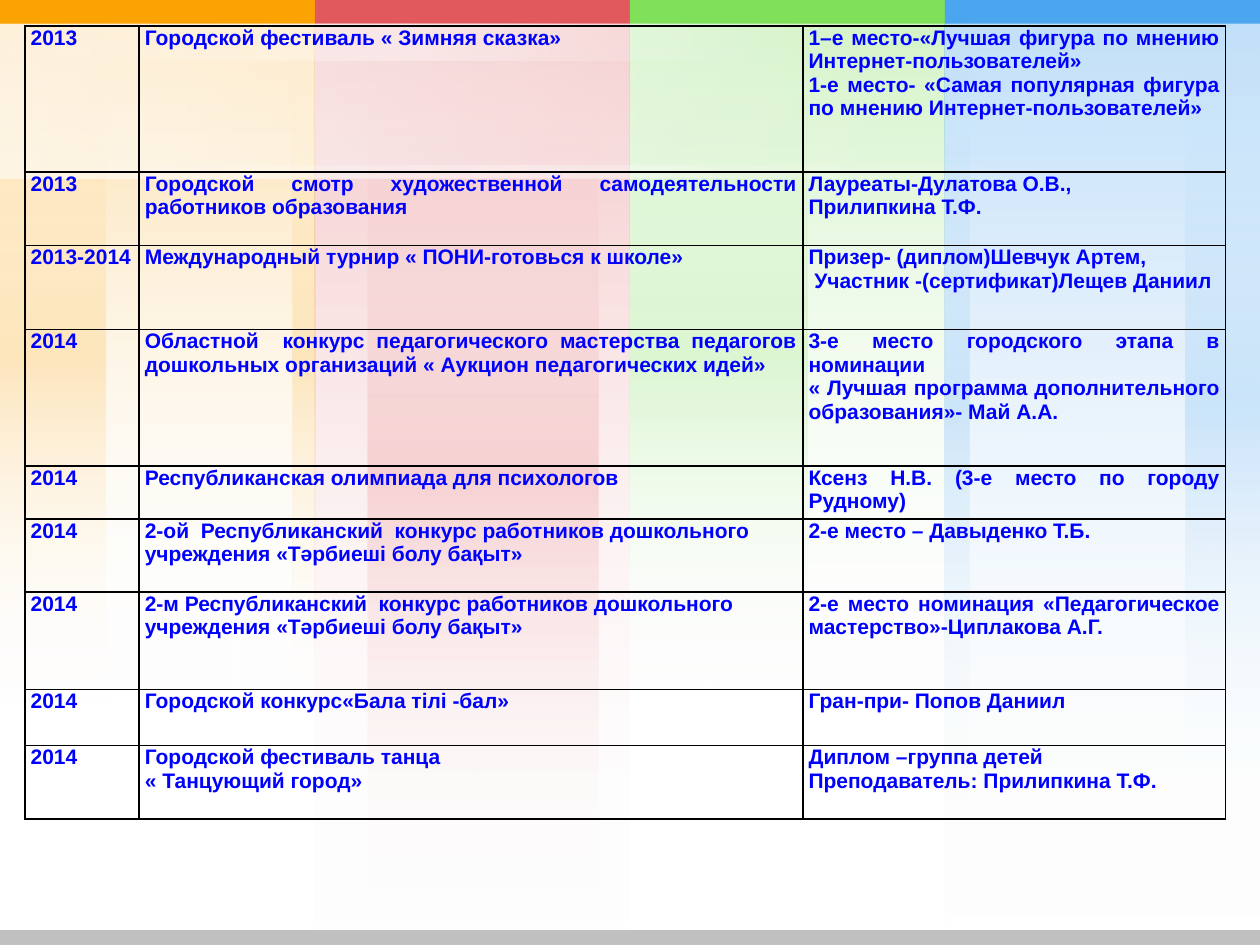
import pptx
import pptx.util
import pptx.dml.color
import pptx.enum.shapes
import pptx.enum.text
import pptx.oxml
import pptx.oxml.ns

Pt = pptx.util.Pt
qn = pptx.oxml.ns.qn
NS = pptx.oxml.ns.nsdecls("a")
LEFT = pptx.enum.text.PP_ALIGN.LEFT
JUSTIFY = pptx.enum.text.PP_ALIGN.JUSTIFY

ORANGE, RED, GREEN, BLUE = "FCA304", "E1595C", "80E05A", "4BA5EF"
WHITE, GREY, BLACK, INK = "FFFFFF", "C0C0C0", "000000", "0000FF"


def rgb(value):
    return pptx.dml.color.RGBColor.from_string(value)


class Deck:
    font, size, margin = "Arial", 12, 3.3

    def __init__(self, width, height):
        self.prs = pptx.Presentation()
        self.prs.slide_width, self.prs.slide_height = Pt(width), Pt(height)
        self.s = self.prs.slides.add_slide(self.prs.slide_layouts[6])
        self.s.background.fill.solid()
        self.s.background.fill.fore_color.rgb = rgb(WHITE)

    def group(self):
        return self.s.shapes.add_group_shape().shapes

    def rect(self, shapes, x, y, w, h, color, rotation=0):
        sp = shapes.add_shape(pptx.enum.shapes.MSO_SHAPE.RECTANGLE,
                              Pt(x), Pt(y), Pt(w), Pt(h))
        sp.rotation = rotation
        sp.shadow.inherit = False
        sp.fill.solid()
        sp.fill.fore_color.rgb = rgb(color)
        sp.line.fill.background()
        return sp

    def fade(self, shapes, x, y, w, h, color, opacity, middle=False, rotation=0):
        """Rectangle fading downwards, or away from its middle both ways."""
        sp = self.rect(shapes, x, y, w, h, color, rotation)
        stops = [(0, color, opacity), (100, WHITE, 0)]
        if middle:
            stops = [(0, WHITE, 0), (50, color, opacity), (100, WHITE, 0)]
        gs = "".join(
            f'<a:gs pos="{pos * 1000}"><a:srgbClr val="{c}">'
            f'<a:alpha val="{alpha * 1000}"/></a:srgbClr></a:gs>'
            for pos, c, alpha in stops)
        grad = pptx.oxml.parse_xml(
            f'<a:gradFill {NS} rotWithShape="1"><a:gsLst>{gs}</a:gsLst>'
            '<a:lin ang="5400000" scaled="1"/></a:gradFill>')
        spPr = sp.element.spPr
        spPr.replace(spPr.find(qn("a:solidFill")), grad)

    def cell(self, cell, lines, align):
        cell.fill.background()
        cell.margin_left = cell.margin_right = Pt(self.margin)
        cell.margin_top = cell.margin_bottom = 0
        tf = cell.text_frame
        for i, line in enumerate(lines):
            p = tf.add_paragraph() if i else tf.paragraphs[0]
            p.alignment = align
            r = p.add_run()
            r.text = line
            r.font.name, r.font.size, r.font.bold = self.font, Pt(self.size), True
            r.font.color.rgb = rgb(INK)
        tcPr = cell._tc.get_or_add_tcPr()
        for i, side in enumerate(("lnL", "lnR", "lnT", "lnB")):
            tcPr.insert(i, pptx.oxml.parse_xml(
                f'<a:{side} {NS} w="12700"><a:solidFill><a:srgbClr val="{BLACK}"/>'
                f'</a:solidFill></a:{side}>'))

    def table(self, x, y, widths, heights, rows, left_cells):
        table = self.s.shapes.add_table(len(rows), len(widths), Pt(x), Pt(y),
                                        Pt(sum(widths)), Pt(sum(heights))).table
        table.first_row = table.horz_banding = False
        for col, width in zip(table.columns, widths):
            col.width = Pt(width)
        for row, height in zip(table.rows, heights):
            row.height = Pt(height)
        for i, row in enumerate(rows):
            for j, text in enumerate(row):
                align = LEFT if (i, j) in left_cells else JUSTIFY
                self.cell(table.cell(i, j), text.split("\n"), align)


# Colour columns: colour, then (x, width, height, fades from the middle)
COLUMNS = [
    (RED, [(180, 180, 540, False), (210, 132, 540, True), (180, 180, 540, False)]),
    (GREEN, [(360, 180, 405, False), (360, 101.5, 405, True), (360, 180, 405, False)]),
    (BLUE, [(540, 14, 459, True), (540, 180, 538, False),
            (677.5, 42.5, 459, True), (540, 180, 538, False)]),
    (ORANGE, [(0, 180, 405, False), (167, 13, 405, True),
              (0, 60.5, 405, True), (0, 180, 405, False)]),
]

# White highlights, turned on their side: x, y, width, height, middle
HIGHLIGHTS = [
    (299.5, -205, 7, 606, True),
    (227, -212.5, 88, 541, False),
    (220.5, -206.5, 21, 461.5, True),
    (227, -212.5, 88, 541, False),
]

# Awards: year, event, result
AWARDS = [
    ("2013", "Городской фестиваль « Зимняя сказка»",
     "1–е место-«Лучшая фигура по мнению Интернет-пользователей»\n"
     "1-е место- «Самая популярная фигура по мнению Интернет-пользователей»"),
    ("2013", "Городской смотр художественной самодеятельности работников образования",
     "Лауреаты-Дулатова О.В.,\nПрилипкина Т.Ф."),
    ("2013-2014", "Международный турнир « ПОНИ-готовься к школе»",
     "Призер- (диплом)Шевчук Артем,\n Участник -(сертификат)Лещев Даниил"),
    ("2014", "Областной  конкурс педагогического мастерства педагогов "
     "дошкольных организаций « Аукцион педагогических идей»",
     "3-е место городского этапа в номинации\n"
     "« Лучшая программа дополнительного образования»- Май А.А."),
    ("2014", "Республиканская олимпиада для психологов",
     "Ксенз Н.В. (3-е место по городу Рудному)"),
    ("2014", "2-ой  Республиканский  конкурс работников дошкольного "
     "учреждения «Тәрбиеші болу бақыт»", "2-е место – Давыденко Т.Б."),
    ("2014", "2-м Республиканский  конкурс работников дошкольного "
     "учреждения «Тәрбиеші болу бақыт»",
     "2-е место номинация «Педагогическое мастерство»-Циплакова А.Г."),
    ("2014", "Городской конкурс«Бала тілі -бал»", "Гран-при- Попов Даниил"),
    ("2014", "Городской фестиваль танца\n« Танцующий город»",
     "Диплом –группа детей\nПреподаватель: Прилипкина Т.Ф."),
]


def main():
    deck = Deck(720, 540)

    # Fading columns
    for color, bands in COLUMNS:
        shapes = deck.group()
        for x, w, h, middle in bands:
            deck.fade(shapes, x, 0, w, h, color, 20, middle)

    # Top strip
    shapes = deck.group()
    for i, color in enumerate((ORANGE, RED, GREEN, BLUE)):
        deck.rect(shapes, i * 180, 0, 180, 13.5, color)

    # Highlights and bottom strip
    shapes = deck.group()
    for x, y, w, h, middle in HIGHLIGHTS:
        deck.fade(shapes, x, y, w, h, WHITE, 35, middle, rotation=270)
    deck.rect(deck.s.shapes, 0, 531.5, 720, 8.5, GREY)

    # Awards table
    deck.table(14.2, 14.9, [65.3, 379.3, 241.6],
               [83.5, 42, 48, 78, 30.2, 41.8, 55.8, 32, 42],
               AWARDS, left_cells={(i, 1) for i in range(5, 9)})

    deck.prs.save("out.pptx")


if __name__ == "__main__":
    main()
